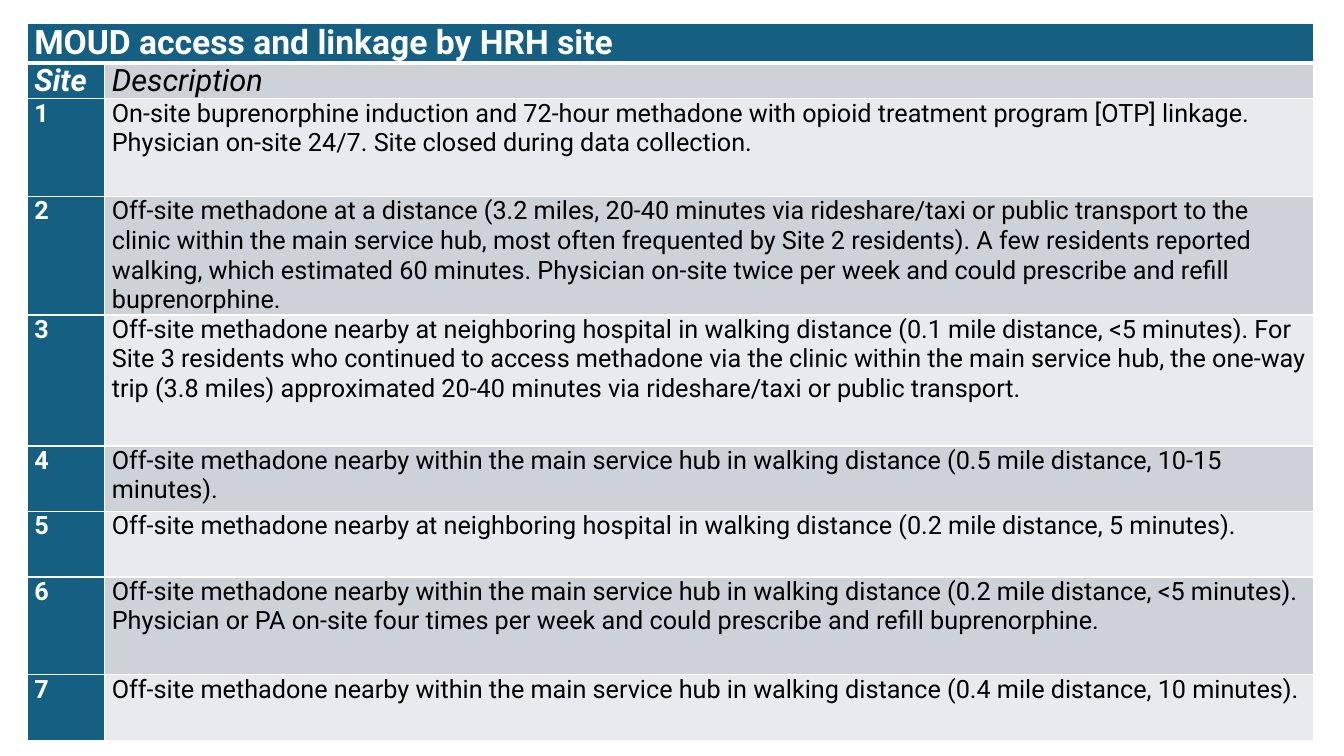
from lxml import etree
from pptx import Presentation
from pptx.dml.color import RGBColor
from pptx.oxml import ns
from pptx.util import Inches, Pt

TEAL, GRAY, LIGHT, WHITE, BLACK = "156082", "CCD2D8", "E8EAED", "FFFFFF", "000000"

TITLE = "MOUD access and linkage by HRH site"
DESCRIPTIONS = [
    "On-site buprenorphine induction and 72-hour methadone with opioid treatment program "
    "[OTP] linkage. Physician on-site 24/7. Site closed during data collection.",
    "Off-site methadone at a distance (3.2 miles, 20-40 minutes via rideshare/taxi or public "
    "transport to the clinic within the main service hub, most often frequented by Site 2 "
    "residents). A few residents reported walking, which estimated 60 minutes. Physician "
    "on-site twice per week and could prescribe and refill buprenorphine.",
    "Off-site methadone nearby at neighboring hospital in walking distance (0.1 mile distance, "
    "<5 minutes). For Site 3 residents who continued to access methadone via the clinic within "
    "the main service hub, the one-way trip (3.8 miles) approximated 20-40 minutes via "
    "rideshare/taxi or public transport.",
    "Off-site methadone nearby within the main service hub in walking distance (0.5 mile "
    "distance, 10-15 minutes).",
    "Off-site methadone nearby at neighboring hospital in walking distance (0.2 mile distance, "
    "5 minutes).",
    "Off-site methadone nearby within the main service hub in walking distance (0.2 mile "
    "distance, <5 minutes). Physician or PA on-site four times per week and could prescribe "
    "and refill buprenorphine.",
    "Off-site methadone nearby within the main service hub in walking distance (0.4 mile "
    "distance, 10 minutes).",
]
COLUMN_WIDTHS = [0.77, 11.99]
ROW_HEIGHTS = [0.34, 0.34, 0.97, 1.16, 1.3, 0.65, 0.65, 0.97, 0.65]


def color(hex_string):
    return RGBColor.from_string(hex_string)


class SlideBuilder:
    """Holds the table style and the current slide."""

    font_name = "Roboto"
    side_margin = Inches(0.07)

    def __init__(self, slide):
        self.slide = slide

    def table(self, left, top, widths, heights):
        frame = self.slide.shapes.add_table(
            len(heights), len(widths), Inches(left), Inches(top),
            Inches(sum(widths)), Inches(sum(heights)))
        table = frame.table
        for column, width in zip(table.columns, widths):
            column.width = Inches(width)
        for row, height in zip(table.rows, heights):
            row.height = Inches(height)
        return table

    def cell(self, cell, words, size, fill, text_color=WHITE, bold=True, italic=False):
        cell.margin_left = cell.margin_right = self.side_margin
        cell.margin_top = cell.margin_bottom = 0
        cell.fill.solid()
        cell.fill.fore_color.rgb = color(fill)
        cell.text = words
        font = cell.text_frame.paragraphs[0].font
        font.name, font.size = self.font_name, Pt(size)
        font.bold, font.italic = bold, italic
        font.color.rgb = color(text_color)

    def borders(self, cell, top=1, bottom=1):
        """Draw white borders, with widths in points, ahead of the cell's fill."""
        properties = cell._tc.get_or_add_tcPr()
        sides = {"lnL": 1, "lnR": 1, "lnT": top, "lnB": bottom}
        for position, (side, width) in enumerate(sides.items()):
            line = etree.Element(ns.qn(f"a:{side}"), w=str(Pt(width)))
            fill = etree.SubElement(line, ns.qn("a:solidFill"))
            etree.SubElement(fill, ns.qn("a:srgbClr"), val=WHITE)
            properties.insert(position, line)


def main():
    presentation = Presentation()
    presentation.slide_width, presentation.slide_height = Inches(13.33), Inches(7.5)
    builder = SlideBuilder(presentation.slides.add_slide(presentation.slide_layouts[6]))

    table = builder.table(0.27, 0.23, COLUMN_WIDTHS, ROW_HEIGHTS)
    table.cell(0, 0).merge(table.cell(0, 1))
    builder.cell(table.cell(0, 0), TITLE, 24, TEAL)
    builder.cell(table.cell(1, 0), "Site", 22, TEAL, italic=True)
    builder.cell(table.cell(1, 1), "Description", 22, GRAY, BLACK, bold=False, italic=True)
    for site, description in enumerate(DESCRIPTIONS, start=1):
        band = LIGHT if site % 2 else GRAY
        builder.cell(table.cell(site + 1, 0), str(site), 18, TEAL)
        builder.cell(table.cell(site + 1, 1), description, 18, band, BLACK, bold=False)

    for row in range(len(ROW_HEIGHTS)):
        for column in range(len(COLUMN_WIDTHS)):
            builder.borders(table.cell(row, column),
                            top=3 if row == 1 else 1, bottom=3 if row == 0 else 1)

    presentation.save("out.pptx")


if __name__ == "__main__":
    main()
